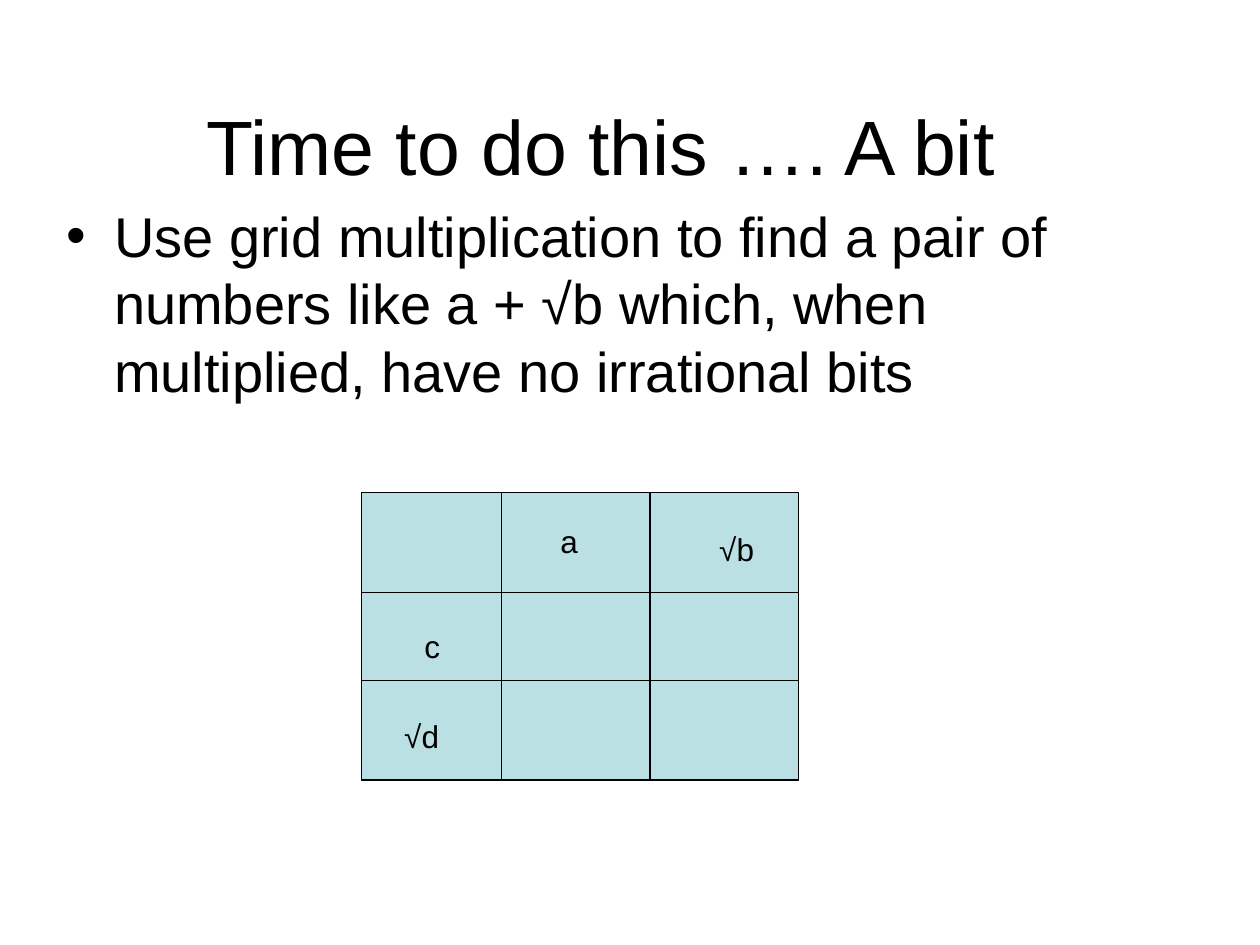
from lxml import etree
from pptx import Presentation
from pptx.dml.color import RGBColor
from pptx.enum.shapes import MSO_CONNECTOR, MSO_SHAPE
from pptx.enum.text import MSO_ANCHOR, MSO_AUTO_SIZE, PP_ALIGN
from pptx.oxml.ns import qn
from pptx.util import Inches, Pt

BLACK = RGBColor(0x00, 0x00, 0x00)
PALE_TEAL = RGBColor(0xBB, 0xE0, 0xE3)
FONT = "Arial"

# Offsets of the inner lines from the grid's top left corner
COLUMN_LINES = (1.11, 2.29)
ROW_LINES = (0.79, 1.49)

# Text, offset from the grid's corner, width, wrap
GRID_LABELS = (
    ("c", 0.40, 1.02, 0.40, True),
    ("√d", 0.24, 1.73, 0.71, True),
    ("a", 1.48, 0.18, 0.34, False),
    ("√b", 2.74, 0.25, 0.48, False),
)


def write(tf, text, size):
    tf.text = text
    p = tf.paragraphs[0]
    font = p.runs[0].font
    font.name, font.size, font.color.rgb = FONT, Pt(size), BLACK
    return p


def fill_placeholder(sp, box, text, size):
    sp.left, sp.top, sp.width, sp.height = (Inches(v) for v in box)
    sp.text_frame.auto_size = MSO_AUTO_SIZE.NONE
    return write(sp.text_frame, text, size)


def add_title(s, box):
    p = fill_placeholder(s.shapes.title, box, "Time to do this …. A bit", 44)
    p.alignment = PP_ALIGN.CENTER
    s.shapes.title.text_frame.vertical_anchor = MSO_ANCHOR.MIDDLE


def add_task(s, box):
    fill_placeholder(
        s.placeholders[1], box,
        "Use grid multiplication to find a pair of numbers like a + √b "
        "which, when multiplied, have no irrational bits", 32)


def add_line(s, x1, y1, x2, y2):
    line = s.shapes.add_connector(
        MSO_CONNECTOR.STRAIGHT, *(Inches(v) for v in (x1, y1, x2, y2)))
    line.line.color.rgb = BLACK
    line.line.width = Pt(0.75)
    etree.SubElement(line._element.spPr, qn("a:effectLst"))


def add_label(s, x, y, w, text, wrap):
    sp = s.shapes.add_textbox(Inches(x), Inches(y), Inches(w), Inches(0.4))
    tf = sp.text_frame
    tf.word_wrap = wrap
    tf.auto_size = MSO_AUTO_SIZE.SHAPE_TO_FIT_TEXT
    write(tf, text, 18)


def add_multiplication_grid(s, box):
    x, y, w, h = box
    sp = s.shapes.add_shape(MSO_SHAPE.RECTANGLE, *(Inches(v) for v in box))
    sp.shadow.inherit = False
    sp.fill.solid()
    sp.fill.fore_color.rgb = PALE_TEAL
    sp.line.color.rgb = BLACK
    sp.line.width = Pt(0.75)
    for dx in COLUMN_LINES:
        add_line(s, x + dx, y, x + dx, y + h)
    for dy in ROW_LINES:
        add_line(s, x, y + dy, x + w, y + dy)
    for text, dx, dy, width, wrap in GRID_LABELS:
        add_label(s, x + dx, y + dy, width, text, wrap)


def main():
    prs = Presentation()
    prs.slide_width, prs.slide_height = Inches(10), Inches(7.5)
    s = prs.slides.add_slide(prs.slide_layouts[1])
    add_title(s, (0.27, 0.52, 9, 1.25))
    add_task(s, (0.43, 1.55, 9, 5.42))
    add_multiplication_grid(s, (2.87, 3.91, 3.47, 2.28))
    prs.save("out.pptx")


if __name__ == "__main__":
    main()
